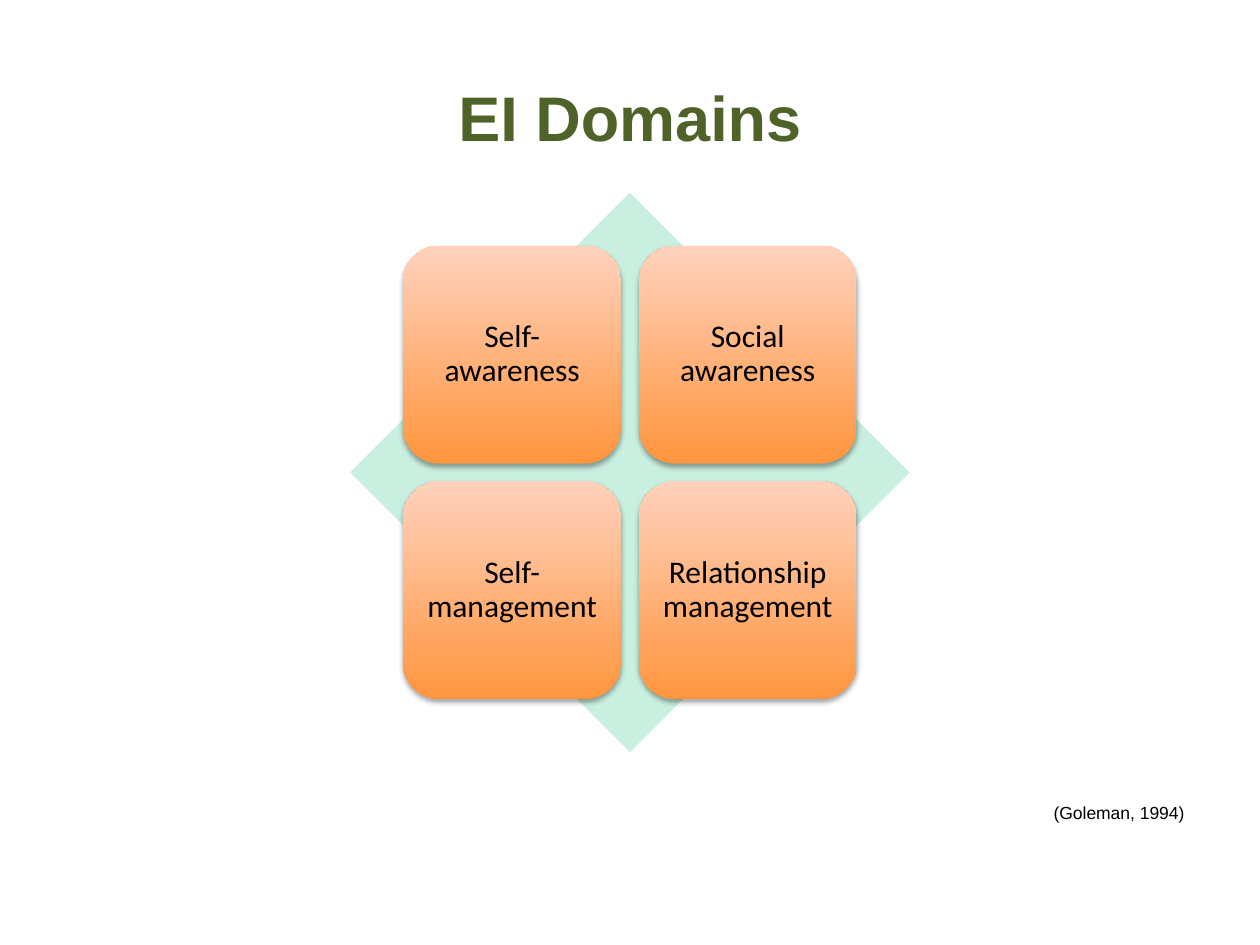
from lxml import etree
from pptx import Presentation
from pptx.dml.color import RGBColor
from pptx.enum.shapes import MSO_SHAPE
from pptx.enum.text import MSO_ANCHOR, PP_ALIGN
from pptx.oxml.ns import qn
from pptx.util import Inches, Pt

DIAMOND = MSO_SHAPE.DIAMOND
ROUNDED = MSO_SHAPE.ROUNDED_RECTANGLE
MIDDLE, BOTTOM = MSO_ANCHOR.MIDDLE, MSO_ANCHOR.BOTTOM
CENTER, RIGHT = PP_ALIGN.CENTER, PP_ALIGN.RIGHT

OLIVE = RGBColor(0x4F, 0x62, 0x28)
MINT = RGBColor(0xC9, 0xEF, 0xE0)
ORANGE = RGBColor(0xFF, 0x95, 0x3E)
PEACH = RGBColor(0xFF, 0xD2, 0xBD)
BLACK = RGBColor(0, 0, 0)

DOMAINS = ["Self-awareness", "Social awareness",
           "Self-management", "Relationship management"]
COLUMNS = 2
GRID_LEFT, GRID_TOP = 3.2, 1.95
CARD_SIZE, CARD_STEP = 1.73, 1.87


def place(shape, left, top, width, height):
    shape.left, shape.top = Inches(left), Inches(top)
    shape.width, shape.height = Inches(width), Inches(height)


def write(shape, text, font_name, size, color, align, anchor, bold=False):
    frame = shape.text_frame
    frame.text = text
    frame.word_wrap = True
    frame.vertical_anchor = anchor
    para = frame.paragraphs[0]
    para.alignment = align
    para.space_before = Pt(0)
    font = para.runs[0].font
    font.name, font.size, font.bold = font_name, Pt(size), bold
    font.color.rgb = color
    return para


def remove_bullet(para):
    properties = para._p.get_or_add_pPr()
    properties.set("marL", "0")
    properties.set("indent", "0")
    etree.SubElement(properties, qn("a:buNone"))


def add_soft_shadow(shape):
    effects = shape._element.spPr.find(qn("a:effectLst"))
    shadow = etree.SubElement(effects, qn("a:outerShdw"), blurRad=str(Pt(3.1)),
                              dist=str(Pt(1.8)), dir="5400000", rotWithShape="0")
    color = etree.SubElement(shadow, qn("a:srgbClr"), val=str(BLACK))
    etree.SubElement(color, qn("a:alpha"), val="35000")


def add_diamond(group):
    diamond = group.shapes.add_shape(DIAMOND, 0, 0, 0, 0)
    place(diamond, 2.78, 1.53, 4.44, 4.44)
    diamond.shadow.inherit = False
    diamond.fill.solid()
    diamond.fill.fore_color.rgb = MINT
    diamond.line.fill.background()


def add_card(group, text, left, top):
    card = group.shapes.add_shape(ROUNDED, 0, 0, 0, 0)
    place(card, left, top, CARD_SIZE, CARD_SIZE)
    card.shadow.inherit = False
    add_soft_shadow(card)
    card.line.fill.background()
    # Orange at the bottom, peach at the top
    card.fill.gradient()
    card.fill.gradient_angle = 90
    for stop, color in zip(card.fill.gradient_stops, (ORANGE, PEACH)):
        stop.color.rgb = color
    para = write(card, text, "Calibri", 18, BLACK, CENTER, MIDDLE)
    para.line_spacing = 0.9
    frame = card.text_frame
    frame.margin_left = frame.margin_right = Inches(0.07)
    frame.margin_top = frame.margin_bottom = Inches(0.07)


def main():
    deck = Presentation()
    deck.slide_width, deck.slide_height = Inches(10), Inches(7.5)
    page = deck.slides.add_slide(deck.slide_layouts[1])

    # Title
    title = page.shapes.title
    place(title, 0.5, 0.3, 9, 1.25)
    write(title, "EI Domains", "Arial", 36, OLIVE, CENTER, MIDDLE, bold=True)

    # Citation
    citation = page.placeholders[1]
    place(citation, 6.53, 6.19, 2.97, 0.39)
    para = write(citation, "(Goleman, 1994)", "Arial", 10, BLACK, RIGHT, BOTTOM)
    remove_bullet(para)

    # Matrix of domains on a diamond
    matrix = page.shapes.add_group_shape()
    add_diamond(matrix)
    for index, domain in enumerate(DOMAINS):
        row, column = divmod(index, COLUMNS)
        add_card(matrix, domain, GRID_LEFT + column * CARD_STEP,
                 GRID_TOP + row * CARD_STEP)

    deck.save("out.pptx")


if __name__ == "__main__":
    main()
